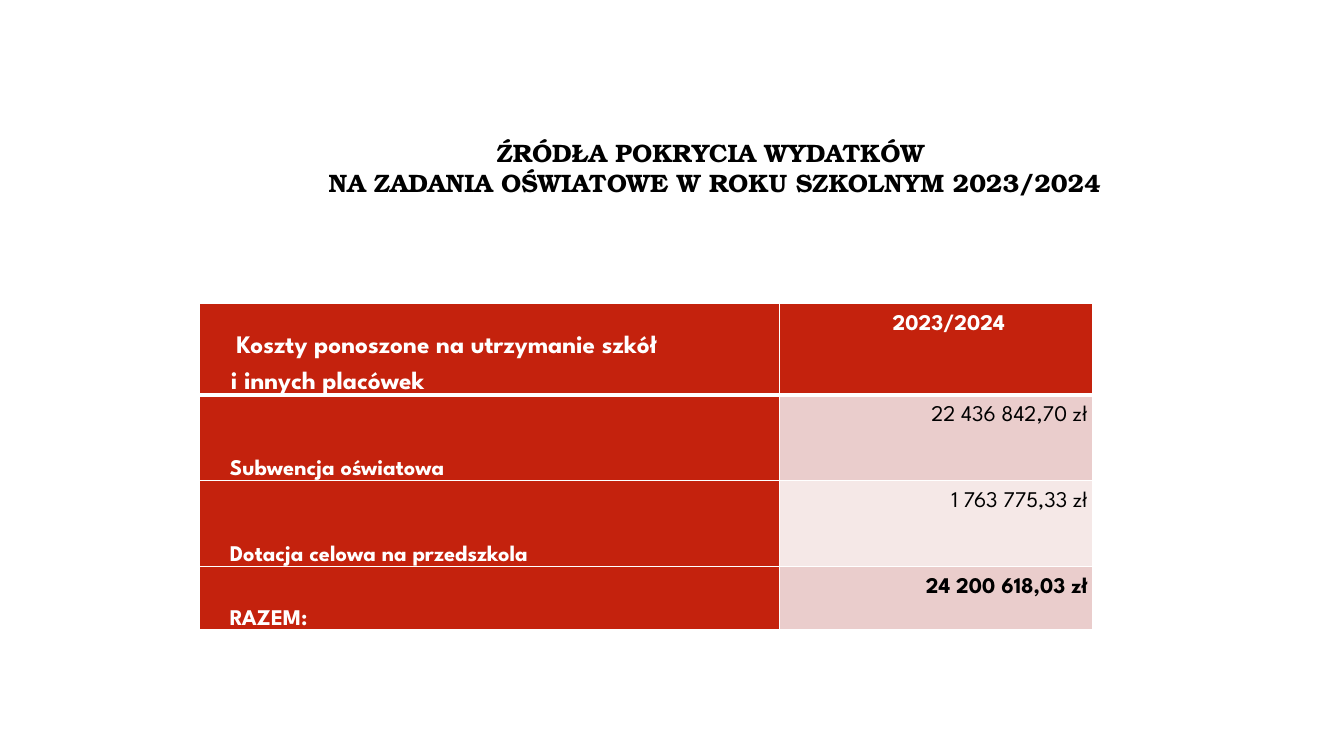
from pptx import Presentation
from pptx.dml.color import RGBColor
from pptx.enum.text import MSO_ANCHOR, PP_ALIGN
from pptx.oxml.ns import qn
from pptx.util import Inches, Pt
from lxml import etree

LEFT, CENTER, RIGHT = PP_ALIGN.LEFT, PP_ALIGN.CENTER, PP_ALIGN.RIGHT
TOP, MIDDLE, BOTTOM = MSO_ANCHOR.TOP, MSO_ANCHOR.MIDDLE, MSO_ANCHOR.BOTTOM

COLORS = {
    "red": "C4220D",
    "band_dark": "EACDCC",
    "band_light": "F5E8E7",
    "white": "FFFFFF",
    "black": "000000",
}
TITLE_FONT = "TeX Gyre Bonum"
TABLE_FONT = "League Spartan"

TITLE = "ŹRÓDŁA POKRYCIA WYDATKÓW \vNA ZADANIA OŚWIATOWE W ROKU SZKOLNYM 2023/2024"
ROWS = [
    (" Koszty ponoszone na utrzymanie szkół \vi innych placówek", "2023/2024"),
    ("Subwencja oświatowa", "22 436 842,70 zł"),
    ("Dotacja celowa na przedszkola", "1 763 775,33 zł"),
    ("RAZEM:", "24 200 618,03 zł"),
]
COLUMN_WIDTHS = [5.75, 3.11]
ROW_HEIGHTS = [0.91, 0.85, 0.85, 0.63]


def style_runs(paragraph, font_name, size, color, bold):
    for run in paragraph.runs:
        run.font.name = font_name
        run.font.size = Pt(size)
        run.font.bold = bold
        run.font.color.rgb = RGBColor.from_string(COLORS[color])


def set_borders(cell, top_width, bottom_width):
    properties = cell._tc.get_or_add_tcPr()
    widths = {"a:lnL": 1, "a:lnR": 1, "a:lnT": top_width, "a:lnB": bottom_width}
    for tag, width in widths.items():
        line = etree.SubElement(properties, qn(tag), w=str(Pt(width)))
        fill = etree.SubElement(line, qn("a:solidFill"))
        etree.SubElement(fill, qn("a:srgbClr"), val=COLORS["white"])


def fill_cell(cell, text, fill, color, size, bold, alignment, anchor):
    cell.fill.solid()
    cell.fill.fore_color.rgb = RGBColor.from_string(COLORS[fill])
    cell.margin_left = cell.margin_right = Inches(0.05)
    cell.margin_top = cell.margin_bottom = 0
    cell.vertical_anchor = anchor
    cell.text_frame.text = text
    paragraph = cell.text_frame.paragraphs[0]
    paragraph.alignment = alignment
    paragraph.line_spacing = 1.54
    paragraph.space_after = Pt(0.2)
    indents = paragraph._p.get_or_add_pPr()
    indents.set("marL", str(Inches(0.26)))
    indents.set("indent", str(Inches(-0.01)))
    style_runs(paragraph, TABLE_FONT, size, color, bold)


def add_title(slide):
    title = slide.shapes.title
    title.left, title.top = Inches(2.38), Inches(1.31)
    title.width, title.height = Inches(9.42), Inches(0.71)
    frame = title.text_frame
    frame.text = TITLE
    frame.word_wrap = True
    frame.vertical_anchor = MIDDLE
    paragraph = frame.paragraphs[0]
    paragraph.alignment = CENTER
    style_runs(paragraph, TITLE_FONT, 18, "black", True)


def add_funding_table(slide):
    table = slide.shapes.add_table(
        len(ROWS), len(COLUMN_WIDTHS), Inches(1.98), Inches(3.01),
        Inches(sum(COLUMN_WIDTHS)), Inches(sum(ROW_HEIGHTS))).table
    for column, width in zip(table.columns, COLUMN_WIDTHS):
        column.width = Inches(width)
    for index, (label, amount) in enumerate(ROWS):
        table.rows[index].height = Inches(ROW_HEIGHTS[index])
        label_cell, amount_cell = table.cell(index, 0), table.cell(index, 1)
        header, total = index == 0, index == len(ROWS) - 1

        # A thick rule separates the header from the body
        for cell in (label_cell, amount_cell):
            set_borders(cell, 3 if index == 1 else 1, 3 if header else 1)

        fill_cell(label_cell, label, "red", "white", 18 if header else 16,
                  True, LEFT, BOTTOM)
        if header:
            fill_cell(amount_cell, amount, "red", "white", 16, True, CENTER, TOP)
        else:
            band = "band_dark" if index % 2 else "band_light"
            fill_cell(amount_cell, amount, band, "black", 16, total, RIGHT, TOP)


def main():
    presentation = Presentation()
    presentation.slide_width = Inches(13.33)
    presentation.slide_height = Inches(7.5)
    slide = presentation.slides.add_slide(presentation.slide_layouts[5])
    add_title(slide)
    add_funding_table(slide)
    presentation.save("out.pptx")


if __name__ == "__main__":
    main()
